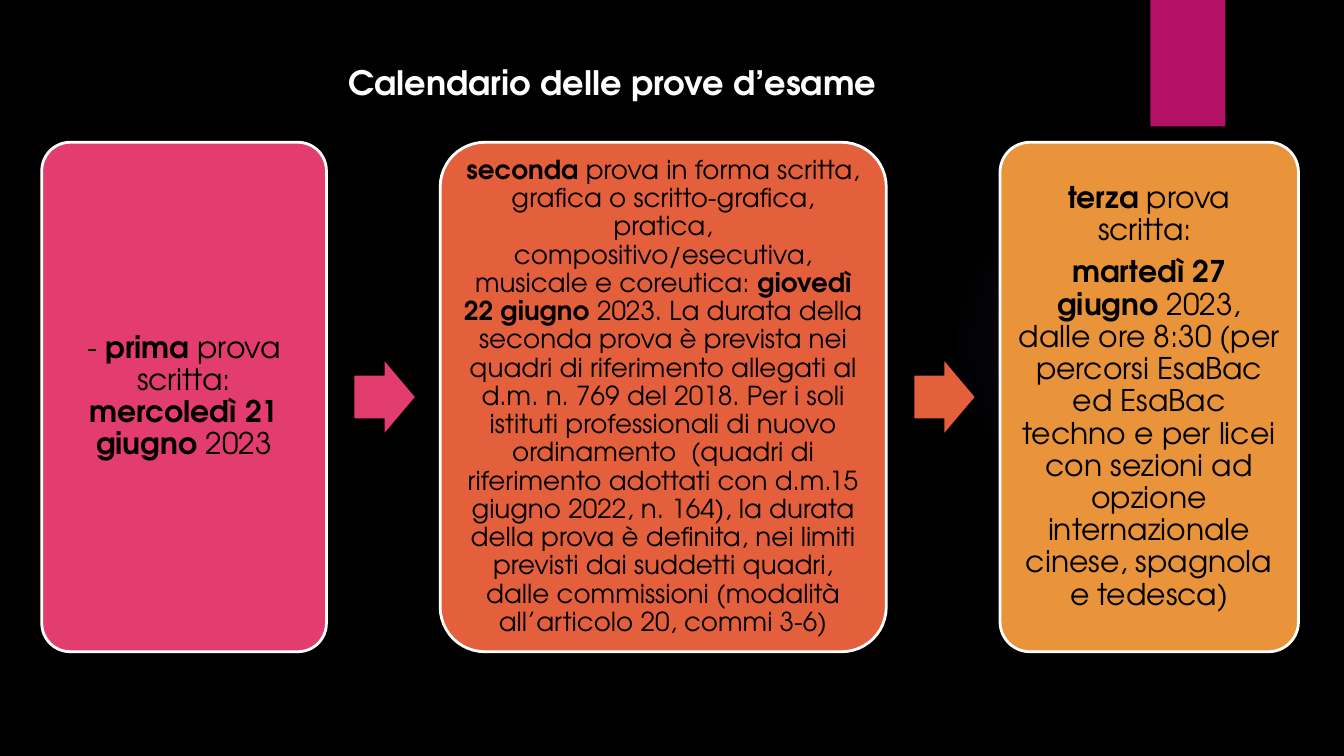
"""Build the slide with the calendar of the three written exams."""
from lxml import etree
from pptx import Presentation
from pptx import util as u
from pptx.dml.color import RGBColor
from pptx.enum import shapes, text
from pptx.oxml import ns

COLORS = {
    "background": "000000", "text": "000000", "white": "FFFFFF",
    "ribbon": "B31166", "glow": "9B6BF2",
    "first": "E33D6F", "second": "E45F3C", "third": "E9943A",
}
FONT = "TeX Gyre Adventor"


def add_block(kind, left, top, width, height, color):
    shape = slide.shapes.add_shape(kind, u.Cm(left), u.Cm(top), u.Cm(width), u.Cm(height))
    shape.shadow.inherit = False
    shape.fill.solid()
    shape.fill.fore_color.rgb = RGBColor.from_string(COLORS[color])
    shape.line.fill.background()
    return shape


def write(shape, content, *, size, color, anchor, inset_x, inset_y, spacing=1.0, after=0):
    frame = shape.text_frame
    frame.word_wrap = True
    frame.auto_size = text.MSO_AUTO_SIZE.NONE
    frame.vertical_anchor = anchor
    frame.margin_left = frame.margin_right = u.Cm(inset_x)
    frame.margin_top = frame.margin_bottom = u.Cm(inset_y)
    for index, line in enumerate(content.split("\n")):
        paragraph = frame.add_paragraph() if index else frame.paragraphs[0]
        paragraph.alignment = text.PP_ALIGN.CENTER
        paragraph.line_spacing = spacing
        paragraph.space_before = u.Pt(0)
        paragraph.space_after = u.Pt(after)
        for position, part in enumerate(line.split("**")):
            if part:
                run = paragraph.add_run()
                run.text = part
                run.font.name = FONT
                run.font.size = u.Pt(size)
                run.font.bold = position % 2 == 1
                run.font.color.rgb = RGBColor.from_string(COLORS[color])


presentation = Presentation()
presentation.slide_width, presentation.slide_height = u.Cm(25.4), u.Cm(14.29)
slide = presentation.slides.add_slide(presentation.slide_layouts[5])
slide.background.fill.solid()
slide.background.fill.fore_color.rgb = RGBColor.from_string(COLORS["background"])

glow = add_block(shapes.MSO_SHAPE.OVAL, 17.93, 3.51, 5.87, 5.87, "glow")
stops = "".join(
    f'<a:gs pos="{position * 1000}"><a:srgbClr val="{COLORS["glow"]}">'
    f'<a:alpha val="{alpha * 1000}"/></a:srgbClr></a:gs>'
    for position, alpha in ((0, 7), (36, 6), (69, 0))
)
gradient = etree.fromstring(
    f'<a:gradFill {ns.nsdecls("a")}><a:gsLst>{stops}</a:gsLst><a:path path="circle">'
    '<a:fillToRect l="50000" t="50000" r="50000" b="50000"/></a:path></a:gradFill>'
)
properties = glow.element.spPr
properties.replace(properties.find(ns.qn("a:solidFill")), gradient)

add_block(shapes.MSO_SHAPE.RECTANGLE, 21.74, 0, 1.42, 2.39, "ribbon")

title = slide.shapes.title
title.left, title.top, title.width, title.height = u.Cm(5.21), u.Cm(1.07), u.Cm(12.73), u.Cm(1.3)
write(title, "**Calendario delle prove d’esame**", size=18, color="white",
      anchor=text.MSO_ANCHOR.TOP, inset_x=0.18, inset_y=0.1)

CARDS = [
    ("first", 5.38, 16, 0.18, "- **prima** prova scritta: **mercoledì 21 giugno **2023"),
    ("second", 8.43, 14, 0.15,
     "**seconda** prova in forma scritta, grafica o scritto-grafica, pratica, "
     "compositivo/esecutiva, musicale e coreutica: **giovedì 22 giugno **2023. "
     "La durata della seconda prova è prevista nei quadri di riferimento allegati al "
     "d.m. n. 769 del 2018. Per i soli istituti professionali di nuovo ordinamento  "
     "(quadri di riferimento adottati con d.m.15 giugno 2022, n. 164), la durata della "
     "prova è definita, nei limiti previsti dai suddetti quadri, dalle commissioni "
     "(modalità all’articolo 20, commi 3-6)"),
    ("third", 5.64, 16, 0.18,
     "**terza** prova scritta: \n**martedì 27 giugno **2023, dalle ore 8:30 (per percorsi "
     "EsaBac ed EsaBac techno e per licei con sezioni ad opzione internazionale cinese, "
     "spagnola e tedesca)"),
]
CARD_TOP, CARD_HEIGHT, CARD_GAP = 2.69, 9.63, 2.15
ARROW_OFFSET, ARROW_WIDTH, ARROW_HEIGHT = 0.53, 1.14, 1.35

left = 0.79
for name, width, size, inset, content in CARDS:
    card = add_block(shapes.MSO_SHAPE.ROUNDED_RECTANGLE, left, CARD_TOP, width, CARD_HEIGHT, name)
    card.adjustments[0] = 0.1
    card.line.color.rgb = RGBColor.from_string(COLORS["white"])
    card.line.width = u.Pt(1.5)
    write(card, content, size=size, color="text", anchor=text.MSO_ANCHOR.MIDDLE,
          inset_x=inset, inset_y=inset, spacing=0.9, after=0.35 * size)
    if name != "third":
        arrow = add_block(shapes.MSO_SHAPE.RIGHT_ARROW, left + width + ARROW_OFFSET,
                          CARD_TOP + (CARD_HEIGHT - ARROW_HEIGHT) / 2,
                          ARROW_WIDTH, ARROW_HEIGHT, name)
        arrow.adjustments[0], arrow.adjustments[1] = 0.6, 0.5
    left += width + CARD_GAP

presentation.save("out.pptx")
